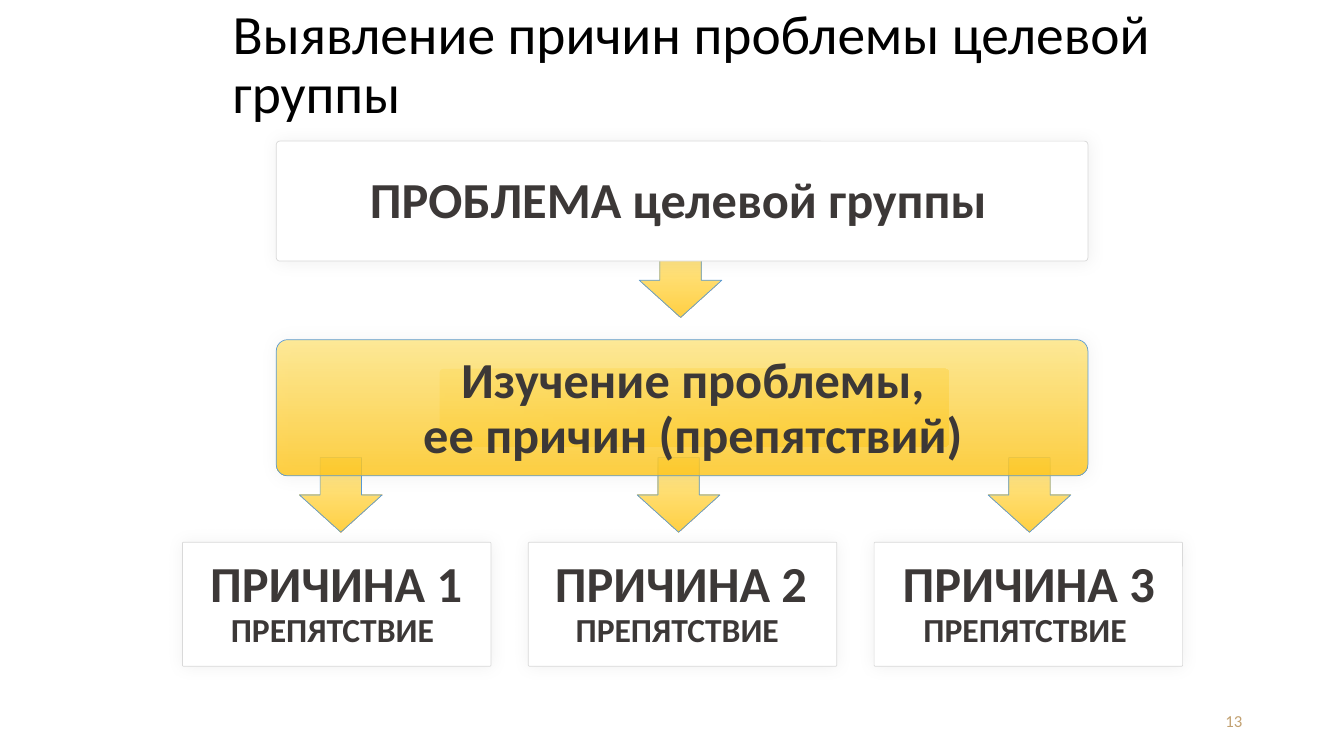
from lxml import etree
from pptx import Presentation
from pptx.dml.color import RGBColor
from pptx.enum.shapes import MSO_SHAPE
from pptx.enum.text import MSO_ANCHOR, PP_ALIGN
from pptx.oxml import parse_xml
from pptx.oxml.ns import nsdecls, qn
from pptx.util import Inches, Pt

ROUND, ARROW = MSO_SHAPE.ROUNDED_RECTANGLE, MSO_SHAPE.RIGHT_ARROW
MIDDLE = MSO_ANCHOR.MIDDLE
LEFT, CENTER, RIGHT = PP_ALIGN.LEFT, PP_ALIGN.CENTER, PP_ALIGN.RIGHT

COLORS = {
    "white": "FFFFFF", "black": "000000", "text": "3C3837", "number": "C2A171",
    "border": "D9D9D9", "blue": "5B9BD5", "light": "FFE682", "gold": "FFC61B",
}


class SlideBuilder:
    font = "Calibri"

    def __init__(self, prs):
        self.slide = prs.slides.add_slide(prs.slide_layouts[6])

    def color(self, name):
        return RGBColor.from_string(COLORS[name])

    def shape(self, kind, box, line=None, angle=None, rotation=0, adj=None):
        """Add a shape: white, or gold gradient when an angle is given."""
        sp = self.slide.shapes.add_shape(kind, *map(Inches, box))
        sp.shadow.inherit = False
        sp.rotation = rotation
        if adj is not None:
            sp.adjustments[0] = adj
        if angle is None:
            sp.fill.solid()
            sp.fill.fore_color.rgb = self.color("white")
        else:
            self.gradient(sp, angle)
        if line:
            sp.line.color.rgb = self.color(line)
            sp.line.width = Pt(0.5)
        else:
            sp.line.fill.background()
        return sp

    def gradient(self, sp, angle):
        stops = "".join(
            f'<a:gs pos="{pos}"><a:srgbClr val="{COLORS[name]}">'
            f'<a:alpha val="81000"/></a:srgbClr></a:gs>'
            for pos, name in ((0, "light"), (100000, "gold")))
        geometry = sp.element.spPr.find(qn("a:prstGeom"))
        geometry.addnext(parse_xml(
            f'<a:gradFill {nsdecls("a")} rotWithShape="1"><a:gsLst>{stops}</a:gsLst>'
            f'<a:lin ang="{angle * 60000}" scaled="0"/></a:gradFill>'))

    def panel(self, box, adj, line="border", angle=None):
        """Add a rounded box with a soft shadow all round."""
        sp = self.shape(ROUND, box, line, angle, adj=adj)
        effects = sp.element.spPr.find(qn("a:effectLst"))
        shadow = etree.SubElement(effects, qn("a:outerShdw"), blurRad=str(Pt(12)),
                                  dist="0", dir="0", algn="ctr", rotWithShape="0")
        tint = etree.SubElement(shadow, qn("a:srgbClr"), val=COLORS["black"])
        etree.SubElement(tint, qn("a:alpha"), val="6000")

    def down_arrow(self, left, top):
        self.shape(ARROW, (left, top, 0.74, 0.82), "blue", angle=0, rotation=90)

    def text(self, box, lines, color="text", align=CENTER, bold=True, spacing=0.9):
        """Add a text box; lines are (text, size) pairs."""
        tf = self.slide.shapes.add_textbox(*map(Inches, box)).text_frame
        tf.word_wrap = True
        tf.vertical_anchor = MIDDLE
        for i, (words, size) in enumerate(lines):
            p = tf.add_paragraph() if i else tf.paragraphs[0]
            p.alignment = align
            p.line_spacing = spacing
            r = p.add_run()
            r.text = words
            r.font.name = self.font
            r.font.size = Pt(size)
            r.font.bold = bold
            r.font.color.rgb = self.color(color)


def main():
    prs = Presentation()
    prs.slide_width, prs.slide_height = Inches(13.33), Inches(7.5)
    s = SlideBuilder(prs)

    # Arrows, behind the boxes
    for left, top in ((3.01, 4.5), (6.36, 4.5), (9.84, 4.5), (6.38, 2.37)):
        s.down_arrow(left, top)

    # Title and slide number
    s.text((2.21, 0.21, 10.21, 0.89), [("Выявление причин проблемы целевой группы", 39.6)],
           "black", LEFT, bold=False)
    s.text((9.42, 6.95, 3, 0.4), [("13", 12)], "number", RIGHT, bold=False, spacing=1)

    # Problem
    s.panel((2.74, 1.4, 8.05, 1.19), 0.029)
    s.text((3.11, 1.56, 7.35, 0.89), [("ПРОБЛЕМА целевой группы ", 36)])

    # Study of the problem
    s.shape(ROUND, (6.5, 1.52, 0.77, 5.05), angle=280, rotation=90, adj=0.05)
    s.panel((2.74, 3.37, 8.05, 1.35), 0.083, "blue", angle=90)
    s.text((3.73, 3.62, 6.4, 0.89),
           [("Изучение проблемы, ", 36), ("ее причин (препятствий) ", 36)])

    # Causes
    for i, text_left in enumerate((1.9, 5.32, 8.77)):
        s.panel((1.81 + 3.43 * i, 5.38, 3.06, 1.23), 0.009)
        s.text((text_left, 5.55, 2.87, 0.89),
               [(f"ПРИЧИНА {i + 1}", 36), ("ПРЕПЯТСТВИЕ ", 24)])

    prs.save("out.pptx")


if __name__ == "__main__":
    main()
